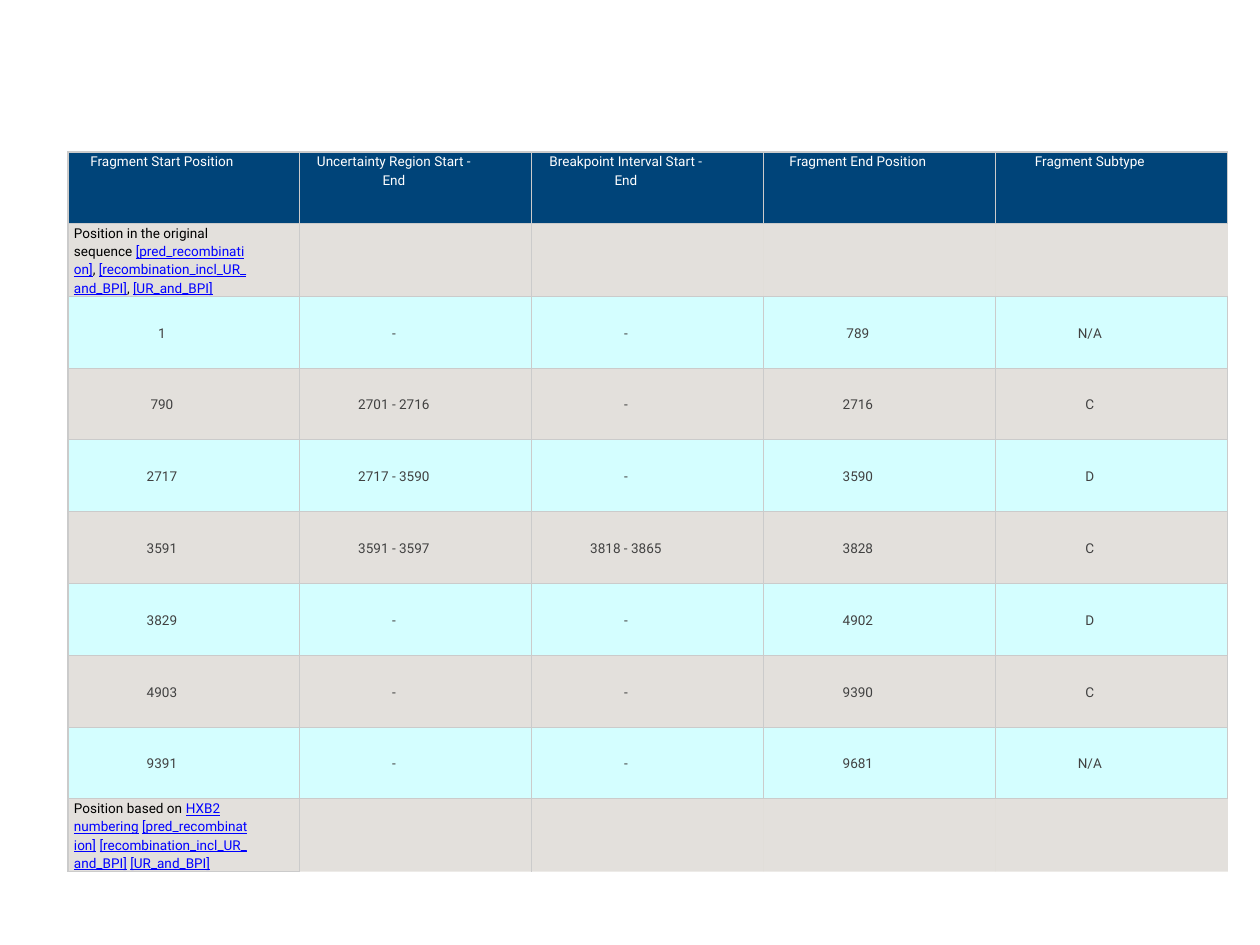
from lxml import etree
from pptx import Presentation
from pptx import util as u
from pptx.dml.color import RGBColor
from pptx.enum import text
from pptx.oxml import parse_xml
from pptx.oxml.ns import nsdecls, qn

PX = 10320
TABLE_WIDTH = 1160 * PX
TABLE_HEIGHT = 718 * PX
THEME = {
    "font": "Roboto", "size": 11, "spacing": 1.15, "border": "CBCBCB",
    "header": "004479", "header_text": "FFFFFF",
    "cyan": "D4FEFF", "beige": "C9C3BA", "beige_alpha": "50000",
    "value": "414141", "label": "000000", "link": "0000FF",
}
PLAIN_TABLE = "{2D5ABB26-0587-4C30-8999-92F81FD0307C}"
NBSP = chr(160)


def draw_borders(cell, sides):
    properties = cell._tc.get_or_add_tcPr()
    for side in sides:
        properties.append(parse_xml(
            f'<a:ln{side} {nsdecls("a")} w="12700"><a:solidFill>'
            f'<a:srgbClr val="{THEME["border"]}"/></a:solidFill></a:ln{side}>'))


def write_runs(cell, runs, alignment):
    paragraph = cell.text_frame.paragraphs[0]
    paragraph.alignment = alignment
    paragraph.line_spacing = THEME["spacing"]
    for words, role in runs:
        run = paragraph.add_run()
        run.text = words
        run.font.name = THEME["font"]
        run.font.size = u.Pt(THEME["size"])
        run.font.color.rgb = RGBColor.from_string(THEME[role])
        run.font.underline = role == "link"


headings = [f"Fragment{NBSP}Start Position",
            f"Uncertainty Region{NBSP}Start - End",
            f"Breakpoint Interval{NBSP}Start - End",
            f"Fragment{NBSP}End Position", f"Fragment{NBSP}Subtype"]
original_label = [
    (f"Position in the original sequence{NBSP}", "label"),
    ("[pred_recombination]", "link"), (f",{NBSP}", "label"),
    ("[recombination_incl_UR_and_BPI]", "link"), (f",{NBSP}", "label"),
    ("[UR_and_BPI]", "link"),
]
hxb2_label = [
    (f"Position based on{NBSP}", "label"),
    ("HXB2 numbering", "link"), (NBSP, "label"),
    ("[pred_recombination]", "link"), (NBSP, "label"),
    ("[recombination_incl_UR_and_BPI]", "link"), (NBSP, "label"),
    ("[UR_and_BPI]", "link"),
]
fragments = [
    ["1", "-", "-", "789", "N/A"],
    ["790", "2701 - 2716", "-", "2716", "C"],
    ["2717", "2717 - 3590", "-", "3590", "D"],
    ["3591", "3591 - 3597", "3818 - 3865", "3828", "C"],
    ["3829", "-", "-", "4902", "D"],
    ["4903", "-", "-", "9390", "C"],
    ["9391", "-", "-", "9681", "N/A"],
]
rows = [
    [[(heading, "header_text")] for heading in headings],
    [original_label] + [None] * 4,
    *[[[(value, "value")] for value in fragment] for fragment in fragments],
    [hxb2_label] + [None] * 4,
]

presentation = Presentation()
presentation.slide_width = 1260 * PX
presentation.slide_height = 945 * PX
slide = presentation.slides.add_slide(presentation.slide_layouts[6])

table = slide.shapes.add_table(
    len(rows), len(headings), 68 * PX, 152 * PX, TABLE_WIDTH, TABLE_HEIGHT).table
table.first_row = False
table.horz_banding = False
table._tbl.tblPr.find(qn("a:tableStyleId")).text = PLAIN_TABLE
for column in table.columns:
    column.width = TABLE_WIDTH // len(headings)
for row in table.rows:
    row.height = TABLE_HEIGHT // len(rows)

for row_index, row in enumerate(rows):
    is_header = row_index == 0
    is_last = row_index == len(rows) - 1
    fill = "header" if is_header else "beige" if row_index % 2 else "cyan"
    for column_index, runs in enumerate(row):
        cell = table.cell(row_index, column_index)
        cell.margin_left = 6 * PX
        cell.margin_right = 50 * PX
        cell.margin_top = cell.margin_bottom = 0
        cell.vertical_anchor = (text.MSO_ANCHOR.TOP if is_header
                                else text.MSO_ANCHOR.MIDDLE)
        if runs:
            is_label = runs[0][1] == "label"
            write_runs(cell, runs, text.PP_ALIGN.LEFT if is_label
                       else text.PP_ALIGN.CENTER)
            draw_borders(cell, "LRTB")
        else:
            draw_borders(cell, ("L" if column_index == 1 else "")
                         + ("T" if is_last else "TB"))
        cell.fill.solid()
        cell.fill.fore_color.rgb = RGBColor.from_string(THEME[fill])
        if fill == "beige":
            color = cell._tc.tcPr.find(qn("a:solidFill")).find(qn("a:srgbClr"))
            etree.SubElement(color, qn("a:alpha")).set("val", THEME["beige_alpha"])

presentation.save("out.pptx")
